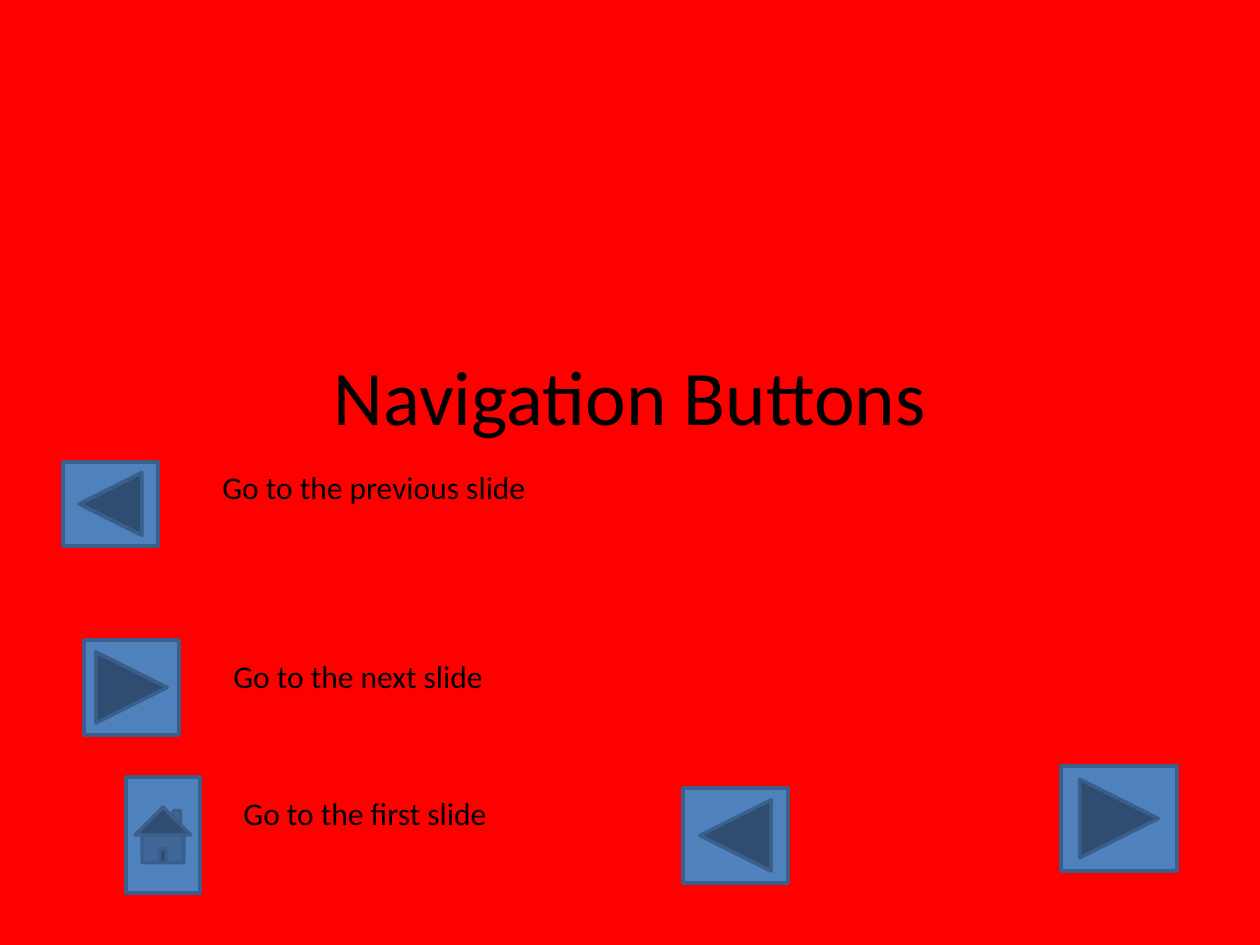
import pptx
import pptx.util
import pptx.dml.color
import pptx.enum.shapes
import pptx.enum.text

EMU_PER_PX = 914400 / 126
COLORS = {"background": "FF0000", "text": "000000",
          "button": "4F81BD", "border": "3A5F8C"}
FONT = "Calibri"

SHAPES = pptx.enum.shapes.MSO_SHAPE
PREVIOUS = SHAPES.ACTION_BUTTON_BACK_OR_PREVIOUS
NEXT = SHAPES.ACTION_BUTTON_FORWARD_OR_NEXT
HOME = SHAPES.ACTION_BUTTON_HOME

# Boxes are left, top, width, height in px
TITLE = ("Navigation Buttons", (94, 294, 1072, 202))
BUTTONS = [
    (PREVIOUS, (63, 462, 95, 84)),
    (NEXT, (84, 640, 95, 95)),
    (HOME, (126, 777, 74, 116)),
    (PREVIOUS, (683, 788, 105, 95)),
    (NEXT, (1061, 766, 116, 105)),
]
LABELS = [
    ("Go to the previous slide", (210, 462, 536, 50)),
    ("Go to the next slide", (221, 651, 388, 50)),
    ("Go to the first slide", (231, 788, 347, 50)),
]


def px(value):
    return pptx.util.Emu(round(value * EMU_PER_PX))


def color(name):
    return pptx.dml.color.RGBColor.from_string(COLORS[name])


def add_text(slide, text, box, size, align, anchor):
    shape = slide.shapes.add_textbox(*map(px, box))
    frame = shape.text_frame
    frame.word_wrap = True
    frame.vertical_anchor = anchor
    paragraph = frame.paragraphs[0]
    paragraph.alignment = align
    run = paragraph.add_run()
    run.text = text
    run.font.name = FONT
    run.font.size = pptx.util.Pt(size)
    run.font.color.rgb = color("text")
    return shape


def add_button(slide, kind, box):
    shape = slide.shapes.add_shape(kind, *map(px, box))
    shape.shadow.inherit = False
    shape.fill.solid()
    shape.fill.fore_color.rgb = color("button")
    shape.line.color.rgb = color("border")
    shape.line.width = pptx.util.Pt(2)


def main():
    presentation = pptx.Presentation()
    presentation.slide_width = px(1260)
    presentation.slide_height = px(945)
    slide = presentation.slides.add_slide(presentation.slide_layouts[6])
    slide.background.fill.solid()
    slide.background.fill.fore_color.rgb = color("background")

    align = pptx.enum.text.PP_ALIGN
    anchor = pptx.enum.text.MSO_ANCHOR

    # Title
    add_text(slide, *TITLE, 44, align.CENTER, anchor.MIDDLE)

    # Navigation buttons
    for kind, box in BUTTONS:
        add_button(slide, kind, box)

    # Button descriptions
    for text, box in LABELS:
        label = add_text(slide, text, box, 18, align.LEFT, anchor.TOP)
        label.text_frame.auto_size = pptx.enum.text.MSO_AUTO_SIZE.SHAPE_TO_FIT_TEXT

    presentation.save("out.pptx")


if __name__ == "__main__":
    main()
